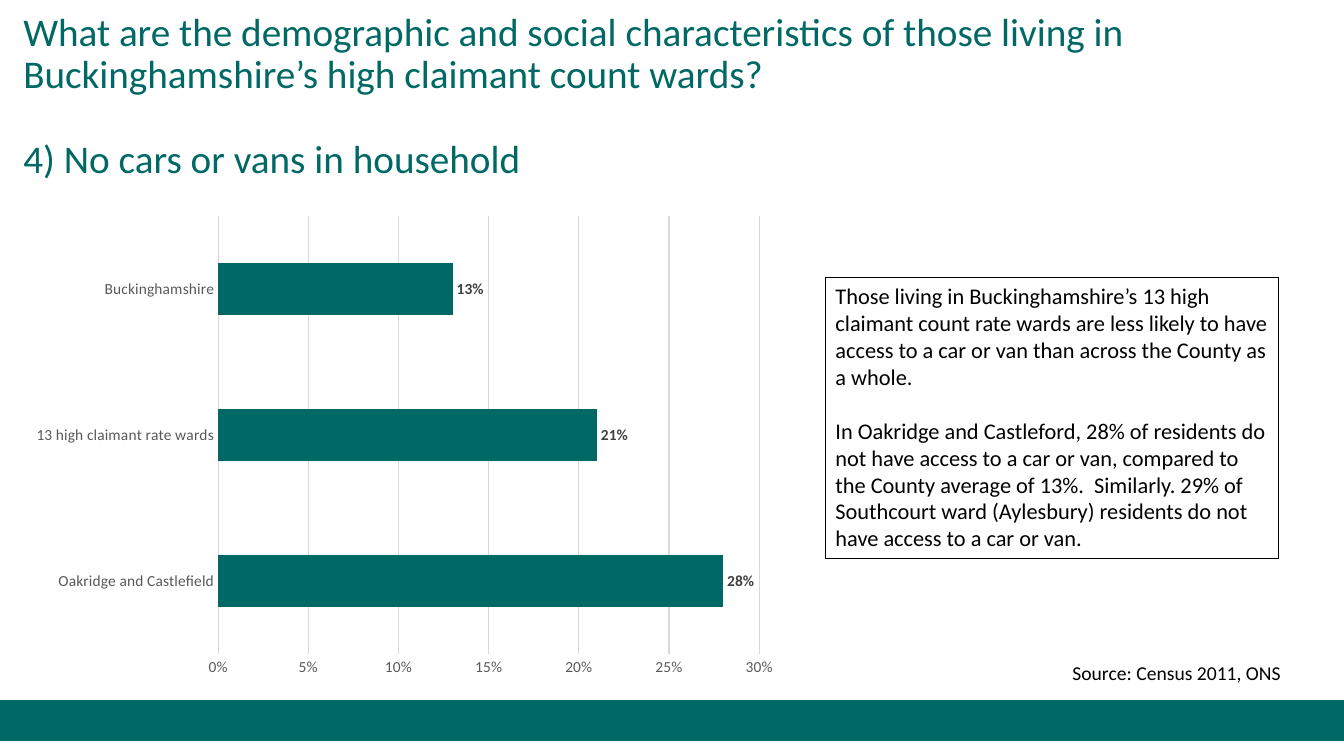
from pptx import Presentation
from pptx.chart.data import CategoryChartData
from pptx.dml.color import RGBColor
from pptx.enum import chart as charts, shapes, text
from pptx.util import Pt

HEADING = [
    "What are the demographic and social characteristics of those living in "
    "Buckinghamshire’s high claimant count wards?",
    "4) No cars or vans in household",
]
NO_CAR_SHARE = {
    "Oakridge and Castlefield": 0.28,
    "13 high claimant rate wards": 0.21,
    "Buckinghamshire": 0.13,
}
FINDINGS = [
    "Those living in Buckinghamshire’s 13 high claimant count rate wards are less "
    "likely to have access to a car or van than across the County as a whole.",
    "In Oakridge and Castleford, 28% of residents do not have access to a car or van, "
    "compared to the County average of 13%.  Similarly. 29% of Southcourt ward "
    "(Aylesbury) residents do not have access to a car or van.",
]
SOURCE = ["Source: Census 2011, ONS"]

THEME = {
    "font": "Calibri",
    "teal": RGBColor.from_string("006965"),
    "ink": RGBColor.from_string("000000"),
    "axis": RGBColor.from_string("595959"),
    "label": RGBColor.from_string("404040"),
    "grid": RGBColor.from_string("D9D9D9"),
    "heading": 28,
    "body": 16,
    "source": 14,
    "chart": 11,
}
WIDTH, HEIGHT = 960, 540
LINE_HEIGHT = 1.22


def box(left, top, width, height):
    return [Pt(value) for value in (left, top, width, height)]


def style_font(font, size, color, bold=False):
    font.name = THEME["font"]
    font.size = Pt(size)
    font.color.rgb = color
    font.bold = bold


def write(frame, paragraphs, *, size, color, anchor=text.MSO_ANCHOR.TOP, spacing=1.0):
    frame.word_wrap = True
    frame.auto_size = text.MSO_AUTO_SIZE.NONE
    frame.vertical_anchor = anchor
    for index, words in enumerate(paragraphs):
        paragraph = frame.add_paragraph() if index else frame.paragraphs[0]
        paragraph.alignment = text.PP_ALIGN.LEFT
        paragraph.line_spacing = spacing
        paragraph.space_before = Pt(round(size * LINE_HEIGHT * spacing, 1) if index else 0)
        run = paragraph.add_run()
        run.text = words
        style_font(run.font, size, color)


def add_panel(slide, place, fill=None, line=None, weight=1):
    panel = slide.shapes.add_shape(shapes.MSO_SHAPE.RECTANGLE, *place)
    panel.shadow.inherit = False
    if fill is None:
        panel.fill.background()
    else:
        panel.fill.solid()
        panel.fill.fore_color.rgb = fill
    panel.line.color.rgb = line
    panel.line.width = Pt(weight)
    return panel


def add_share_chart(slide, place):
    shares = CategoryChartData(number_format="0%")
    shares.categories = list(NO_CAR_SHARE)
    shares.add_series("Series 1", list(NO_CAR_SHARE.values()))
    chart = slide.shapes.add_chart(charts.XL_CHART_TYPE.BAR_CLUSTERED, *place, shares).chart
    chart.has_title = False
    chart.has_legend = False
    style_font(chart.font, THEME["chart"], THEME["ink"])

    wards, percent = chart.category_axis, chart.value_axis
    for axis in (wards, percent):
        axis.major_tick_mark = axis.minor_tick_mark = charts.XL_TICK_MARK.NONE
        style_font(axis.tick_labels.font, THEME["chart"], THEME["axis"])
    wards.has_major_gridlines = False
    percent.has_major_gridlines = True
    percent.minimum_scale, percent.maximum_scale, percent.major_unit = 0, 0.3, 0.05
    percent.tick_labels.number_format = "0%"
    percent.tick_labels.number_format_is_linked = False
    percent.format.line.fill.background()
    for line in (wards.format.line, percent.major_gridlines.format.line):
        line.color.rgb = THEME["grid"]
        line.width = Pt(0.75)

    plot = chart.plots[0]
    plot.gap_width = 182
    plot.vary_by_categories = False
    bars = plot.series[0]
    bars.invert_if_negative = False
    bars.format.fill.solid()
    bars.format.fill.fore_color.rgb = THEME["teal"]
    labels = bars.data_labels
    labels.show_value = True
    labels.number_format = "0%"
    labels.number_format_is_linked = False
    labels.position = charts.XL_LABEL_POSITION.OUTSIDE_END
    style_font(labels.font, THEME["chart"], THEME["label"], bold=True)


def main():
    deck = Presentation()
    deck.slide_width, deck.slide_height = Pt(WIDTH), Pt(HEIGHT)
    slide = deck.slides.add_slide(deck.slide_layouts[5])

    add_panel(slide, box(0, 500.4, WIDTH, 28.8), fill=THEME["teal"], line=THEME["teal"])

    heading = slide.shapes.title
    heading.left, heading.top, heading.width, heading.height = box(9.4, 17.3, 828, 104.4)
    write(heading.text_frame, HEADING, size=THEME["heading"], color=THEME["teal"],
          anchor=text.MSO_ANCHOR.MIDDLE, spacing=0.9)

    add_share_chart(slide, box(15.1, 147.6, 547.9, 342.7))

    findings = add_panel(slide, box(589.7, 198, 323.3, 200.9), line=THEME["ink"], weight=0.75)
    write(findings.text_frame, FINDINGS, size=THEME["body"], color=THEME["ink"])

    source = slide.shapes.add_textbox(*box(758.9, 468.7, 190, 24.5))
    write(source.text_frame, SOURCE, size=THEME["source"], color=THEME["ink"])

    deck.save("out.pptx")


if __name__ == "__main__":
    main()
